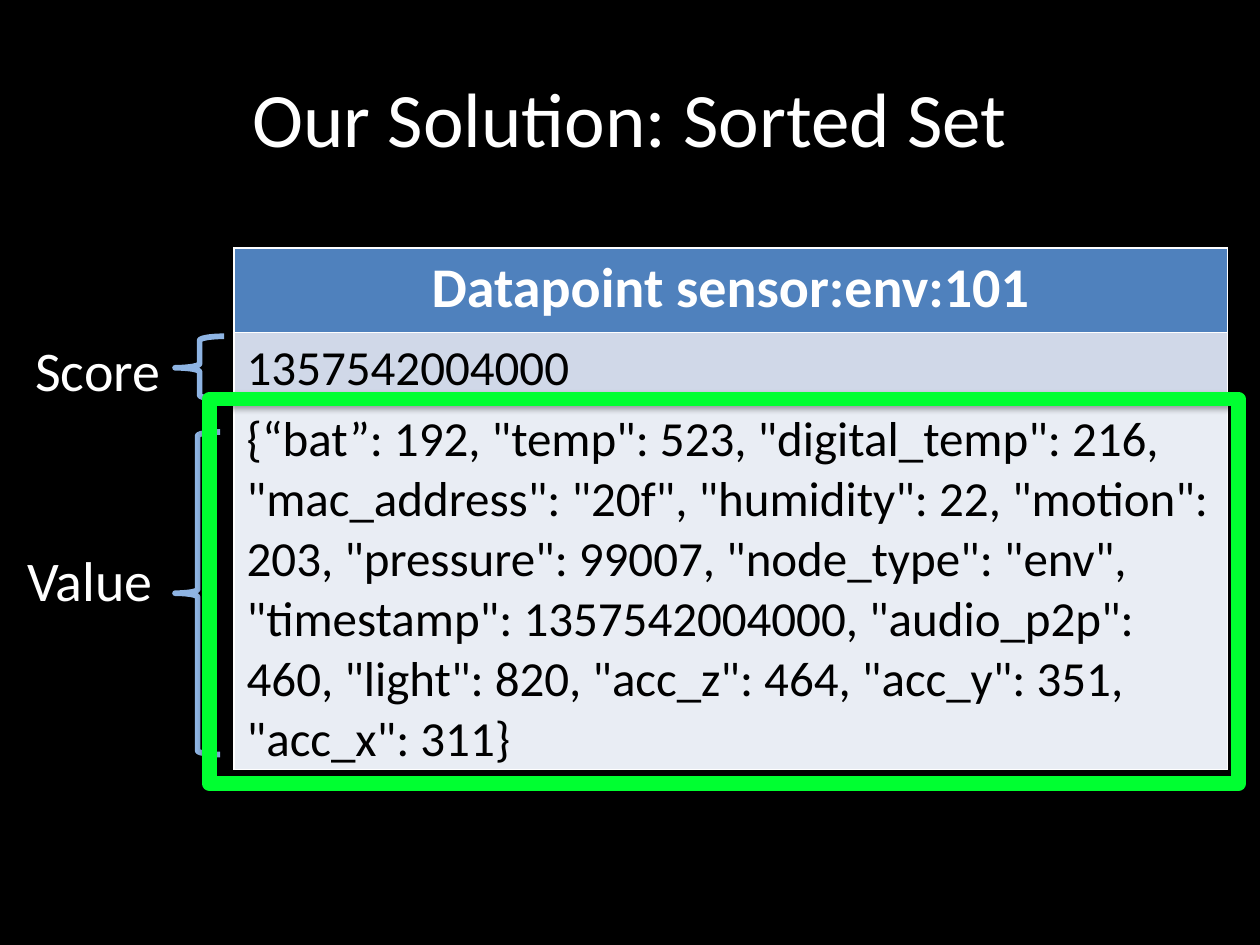
from pptx import Presentation
from pptx.dml.color import RGBColor
from pptx.enum.shapes import MSO_SHAPE
from pptx.enum.text import MSO_ANCHOR, MSO_AUTO_SIZE, PP_ALIGN
from pptx.util import Cm, Pt

BRACE, RECTANGLE = MSO_SHAPE.LEFT_BRACE, MSO_SHAPE.RECTANGLE
CENTER, LEFT = PP_ALIGN.CENTER, PP_ALIGN.LEFT
MIDDLE = MSO_ANCHOR.MIDDLE
FIT_SHAPE = MSO_AUTO_SIZE.SHAPE_TO_FIT_TEXT
FONT = "Calibri"
TITLE_ONLY = 5
COLORS = {
    "background": "000000",
    "light": "FFFFFF",
    "dark": "000000",
    "header": "4F81BD",
    "score": "D0D8E8",
    "value": "E9EDF4",
    "brace": "8EB4E3",
    "highlight": "00FF31",
}
DATAPOINT = (
    '{“bat”: 192, "temp": 523, "digital_temp": 216, "mac_address": "20f", '
    '"humidity": 22, "motion": 203, "pressure": 99007, "node_type": "env", '
    '"timestamp": 1357542004000, "audio_p2p": 460, "light": 820, '
    '"acc_z": 464, "acc_y": 351, "acc_x": 311}'
)


def color(name):
    """Return the named colour."""
    return RGBColor.from_string(COLORS[name])


def write(frame, text, size, ink, align=LEFT, bold=False):
    """Fill a text frame with one formatted paragraph."""
    frame.text = text
    para = frame.paragraphs[0]
    para.alignment = align
    para.font.name = FONT
    para.font.size = Pt(size)
    para.font.bold = bold
    para.font.color.rgb = color(ink)


def place_title(page, box, text):
    """Move the title placeholder to the box and set its text."""
    title = page.shapes.title
    title.left, title.top, title.width, title.height = map(Cm, box)
    title.text_frame.vertical_anchor = MIDDLE
    write(title.text_frame, text, 44, "light", CENTER)


def add_datapoint_table(page, box):
    """Add the one-column table of header, score and value."""
    rows = [
        ("Datapoint sensor:env:101", 1.7, "header", 32, "light", CENTER, True),
        ("1357542004000", 1.4, "score", 28, "dark", LEFT, False),
        (DATAPOINT, 7.19, "value", 28, "dark", LEFT, False),
    ]
    table = page.shapes.add_table(len(rows), 1, *map(Cm, box)).table
    for index, (text, height, fill, *style) in enumerate(rows):
        table.rows[index].height = Cm(height)
        cell = table.cell(index, 0)
        cell.fill.solid()
        cell.fill.fore_color.rgb = color(fill)
        write(cell.text_frame, text, *style)


def add_outline(page, kind, box, ink, weight):
    """Add an unfilled shape with a thick line and the theme shadow."""
    shape = page.shapes.add_shape(kind, *map(Cm, box))
    shape.fill.background()
    shape.line.color.rgb = color(ink)
    shape.line.width = Pt(weight)


def add_label(page, box, text):
    """Add the name of a table row."""
    label = page.shapes.add_textbox(*map(Cm, box))
    label.text_frame.word_wrap = False
    label.text_frame.auto_size = FIT_SHAPE
    write(label.text_frame, text, 32, "light")


def build_sorted_set_slide(deck):
    """Build the slide that explains the sorted set."""
    page = deck.slides.add_slide(deck.slide_layouts[TITLE_ONLY])
    page.background.fill.solid()
    page.background.fill.fore_color.rgb = color("background")
    place_title(page, (1.27, 0.76, 22.86, 3.18), "Our Solution: Sorted Set")
    add_label(page, (0.46, 6.63, 3.07, 1.63), "Score")
    add_label(page, (0.3, 10.87, 3.12, 1.63), "Value")
    add_datapoint_table(page, (4.72, 5, 20.02, 10.29))
    add_outline(page, BRACE, (3.53, 8.71, 0.91, 6.5), "brace", 3.25)
    add_outline(page, BRACE, (3.53, 6.78, 0.99, 1.27), "brace", 3.25)
    add_outline(page, RECTANGLE, (4.22, 8.05, 20.75, 7.75), "highlight", 8.25)


def main():
    """Create and save the deck."""
    deck = Presentation()
    deck.slide_width, deck.slide_height = Cm(25.4), Cm(19.05)
    build_sorted_set_slide(deck)
    deck.save("out.pptx")


if __name__ == "__main__":
    main()
